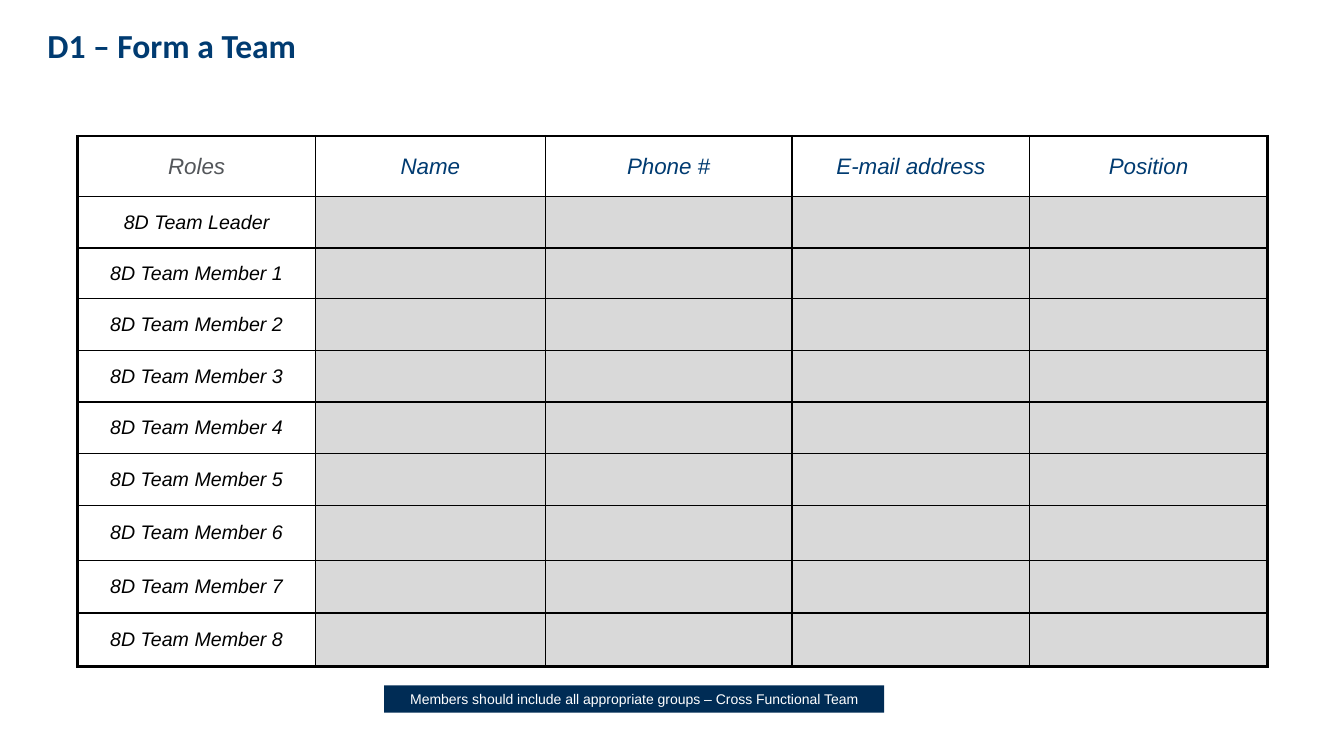
from dataclasses import dataclass

from lxml.etree import SubElement
from pptx import Presentation
from pptx.dml.color import RGBColor
from pptx.enum.shapes import MSO_SHAPE as Shape
from pptx.enum.text import MSO_ANCHOR as Anchor, PP_ALIGN as Align
from pptx.oxml.ns import qn
from pptx.util import Cm, Pt


@dataclass(frozen=True)
class Theme:
    navy: str = "003B71"
    banner: str = "002C55"
    gray: str = "53565A"
    entry: str = "D9D9D9"
    black: str = "000000"
    white: str = "FFFFFF"
    title_size: float = 24
    header_size: float = 16
    role_size: float = 14
    banner_size: float = 10
    outer_line: float = 2.25
    inner_line: float = 1


theme = Theme()


def write(frame, text, size, color, align=Align.CENTER, font="Arial", bold=False, italic=False):
    frame.text = text
    para = frame.paragraphs[0]
    para.alignment = align
    span = para.runs[0].font
    span.name, span.size, span.bold, span.italic = font, Pt(size), bold, italic
    span.color.rgb = RGBColor.from_string(color)


def draw_border(cell, side, width):
    line = SubElement(cell._tc.get_or_add_tcPr(), qn(f"a:ln{side}"), w=str(Pt(width)))
    SubElement(SubElement(line, qn("a:solidFill")), qn("a:srgbClr"), val=theme.black)


deck = Presentation()
deck.slide_width, deck.slide_height = Cm(33.87), Cm(19.05)
page = deck.slides.add_slide(deck.slide_layouts[5])

title = page.shapes.title
title.left, title.top, title.width, title.height = Cm(0.94), Cm(0.51), Cm(28.55), Cm(1.98)
title.text_frame.vertical_anchor = Anchor.TOP
write(title.text_frame, "D1 – Form a Team", theme.title_size, theme.navy,
      align=Align.LEFT, font="Calibri", bold=True)

# Team table: headers, roles and empty entry cells
headers = ["Roles", "Name", "Phone #", "E-mail address", "Position"]
roles = ["8D Team Leader"] + [f"8D Team Member {number}" for number in range(1, 9)]
widths = [5.99, 5.79, 6.22, 5.99, 5.99]
heights = [1.52, 1.3, 1.28, 1.3, 1.3, 1.3, 1.3, 1.4, 1.32, 1.35]
last_row, last_column = len(heights) - 1, len(widths) - 1

team = page.shapes.add_table(len(heights), len(widths), Cm(1.96), Cm(3.43),
                             Cm(sum(widths)), Cm(sum(heights))).table
team.first_row = team.horz_banding = False
for column, width in zip(team.columns, widths):
    column.width = Cm(width)
for row, height in zip(team.rows, heights):
    row.height = Cm(height)

for r in range(len(heights)):
    for c in range(len(widths)):
        cell = team.cell(r, c)
        cell.vertical_anchor = Anchor.MIDDLE
        on_edge = {"L": c == 0, "R": c == last_column, "T": r == 0, "B": r == last_row}
        for side, outer in on_edge.items():
            draw_border(cell, side, theme.outer_line if outer else theme.inner_line)
        if r == 0:
            cell.fill.background()
            write(cell.text_frame, headers[c], theme.header_size,
                  theme.navy if c else theme.gray, italic=True)
            continue
        cell.fill.solid()
        cell.fill.fore_color.rgb = RGBColor.from_string(theme.entry if c else theme.white)
        if c == 0:
            write(cell.text_frame, roles[r - 1], theme.role_size, theme.black, italic=True)

banner = page.shapes.add_shape(Shape.RECTANGLE, Cm(9.68), Cm(17.27), Cm(12.6), Cm(0.69))
banner.shadow.inherit = False
banner.fill.solid()
banner.fill.fore_color.rgb = RGBColor.from_string(theme.banner)
banner.line.fill.background()
banner.text_frame.word_wrap = True
banner.text_frame.vertical_anchor = Anchor.MIDDLE
write(banner.text_frame, "Members should include all appropriate groups – Cross Functional Team",
      theme.banner_size, theme.white)

deck.save("out.pptx")
